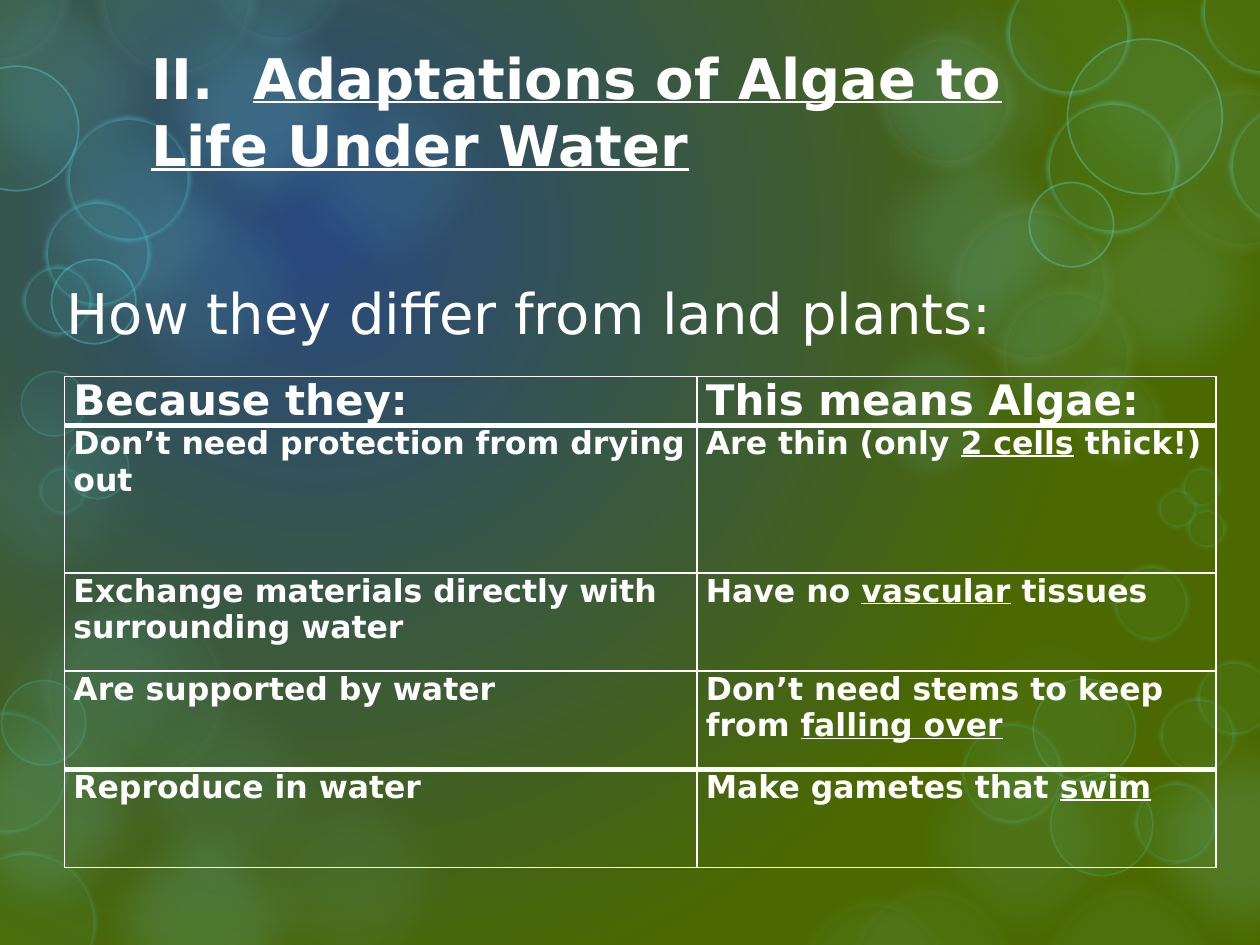
"""Build a slide on how algae are adapted to life under water."""
from lxml import etree
from pptx import Presentation
from pptx import util as u
from pptx.dml.color import RGBColor
from pptx.enum import shapes, text
from pptx.oxml import ns

WHITE = RGBColor(0xFF, 0xFF, 0xFF)
BLUE = RGBColor(0x28, 0x48, 0x80)
GREEN = RGBColor(0x4B, 0x69, 0x00)
GLOW = RGBColor(0x77, 0xD9, 0xE8)
CYAN = RGBColor(0x5E, 0xF0, 0xF7)
PALE = RGBColor(0xE9, 0xF9, 0xFB)

FONT = "DejaVu Sans"
GLOW_SIZE = 5.31

# Centre x, centre y, opacity
GLOWS = [
    (2.01, 13.87, 8), (4.1, 5.7, 10), (7.86, 3.44, 10), (4.09, 18.57, 16),
    (1.24, 1.83, 14), (5.22, 2.2, 20), (2.65, 4.48, 15), (23.47, 1.83, 10),
    (19.63, 1.9, 10), (23.47, 5.69, 15), (25.02, 16.94, 16), (21.17, 14.77, 5),
    (0.91, 16.41, 16), (4.61, 15.96, 8), (19.65, 4.84, 15), (20.59, 16.93, 10),
    (7.06, 17.81, 8), (0.89, 9.83, 8),
]
# Fill, fill opacity, line, line width, line opacity, soft edge, (centre x, centre y, diameter)
BUBBLES = [
    (GLOW, 10, None, 0, 0, 12, [(18.83, 8.34, 3.38)]),
    (GLOW, 10, PALE, 14, 6, 10, [
        (25.07, 3.4, 3.48), (19.08, 2.03, 2.9), (20.79, 5.73, 3.38), (21.49, 7.14, 2.9),
        (22.52, 8.39, 2.01), (3.56, 0, 3.33), (5.61, -0.46, 2.9), (0, -0.03, 2.9)]),
    (GLOW, 6, PALE, 14, 4, 10, [
        (2.71, 13.96, 3.89), (17.63, 19.61, 3.15), (18.75, 19.53, 3.45), (22.73, 19.48, 3.38)]),
    (CYAN, 5, CYAN, 1, 15, 0, [
        (0.88, 14.57, 1.7), (22.21, 16.62, 2.06), (21.86, 14.72, 2.06),
        (1.08, 8.14, 1.3), (1.96, 9.42, 1.27)]),
    (CYAN, 5, CYAN, 5, 15, 3, [
        (0.53, 18.59, 2.87), (0.13, 15.57, 2.49), (20.41, 15.58, 2.06), (23.7, 16.59, 1.68),
        (23.2, 12.15, 1.55), (24.14, 14.82, 1.55), (24.89, 14.07, 1.55), (24.22, 9.82, 0.84),
        (23.74, 10.25, 0.84), (24.32, 10.66, 0.84), (1.26, 9.89, 0.99)]),
    (CYAN, 5, CYAN, 1, 30, 0, [
        (0.33, 2.59, 2.51), (1.89, 6.08, 1.7), (23.08, 2.35, 3.12), (21.6, 4.53, 1.7)]),
    (CYAN, 5, CYAN, 5, 30, 3, [
        (2.59, 3.61, 2.54), (1.97, 5.12, 2.16), (1.16, 6.06, 1.45), (21.54, 0.66, 2.51),
        (25.48, 0.25, 2.54), (26.04, 3.35, 2.54), (22.43, 3.38, 2.69)]),
]
# Each cell is a list of (words, underlined)
ROWS = [
    ([("Because they:", False)], [("This means Algae:", False)]),
    ([("Don’t need protection from drying out", False)],
     [("Are thin (only ", False), ("2 cells", True), (" thick!)", False)]),
    ([("Exchange materials directly with surrounding water", False)],
     [("Have no ", False), ("vascular", True), (" tissues", False)]),
    ([("Are supported by water", False)],
     [("Don’t need stems to keep from ", False), ("falling over", True)]),
    ([("Reproduce in water", False)],
     [("Make gametes that ", False), ("swim", True)]),
]
COLUMN_WIDTHS = [12.75, 10.46]
ROW_HEIGHTS = [0.99, 2.97, 1.98, 1.98, 1.98]
THICK_ABOVE = (1, 4)


def add_child(parent, tag, **attributes):
    """Append a drawing element and return it."""
    child = etree.SubElement(parent, ns.qn(tag))
    for name, value in attributes.items():
        child.set(name, str(value))
    return child


def paint_background(slide):
    """Fill the slide with a radial gradient from blue to green."""
    fill = slide.background.fill
    fill.gradient()
    for stop, color in zip(fill.gradient_stops, (BLUE, GREEN)):
        stop.color.rgb = color
    gradient = next(slide.element.iter(ns.qn("a:gradFill")))
    gradient.remove(gradient.find(ns.qn("a:lin")))
    radial = add_child(gradient, "a:path", path="circle")
    add_child(radial, "a:fillToRect", l=50000, t=50000, r=100000, b=100000)


def add_bubble(slide, x, y, diameter, fill, opacity, line=None, width=0, line_opacity=0, soft=0):
    """Add a translucent circle to the backdrop of the slide layout."""
    radius = diameter / 2
    shape = slide.shapes.add_shape(
        shapes.MSO_SHAPE.OVAL, u.Cm(x - radius), u.Cm(y - radius), u.Cm(diameter), u.Cm(diameter))
    shape.shadow.inherit = False
    shape.fill.solid()
    shape.fill.fore_color.rgb = fill
    if line is None:
        shape.line.fill.background()
    else:
        shape.line.color.rgb = line
        shape.line.width = u.Pt(width)
    properties = shape.element.spPr
    for color, percent in zip(properties.iter(ns.qn("a:srgbClr")), (opacity, line_opacity)):
        add_child(color, "a:alpha", val=percent * 1000)
    if soft:
        add_child(properties.find(ns.qn("a:effectLst")), "a:softEdge", rad=u.Pt(soft))
    backdrop = slide.slide_layout.shapes.element
    next(shape.element.iter(ns.qn("p:cNvPr"))).set("id", str(100 + len(backdrop)))
    backdrop.append(shape.element)


def add_run(paragraph, words, size, bold=False, underline=False):
    """Add one white run to a paragraph."""
    run = paragraph.add_run()
    run.text = words
    run.font.name = FONT
    run.font.size = u.Pt(size)
    run.font.bold = bold
    run.font.underline = underline
    run.font.color.rgb = WHITE


def place(shape, left, top, width, height, anchor):
    """Move a placeholder and return its left-aligned paragraph."""
    shape.left, shape.top, shape.width, shape.height = map(u.Cm, (left, top, width, height))
    frame = shape.text_frame
    frame.word_wrap = True
    frame.auto_size = text.MSO_AUTO_SIZE.NONE
    frame.vertical_anchor = anchor
    paragraph = frame.paragraphs[0]
    paragraph.alignment = text.PP_ALIGN.LEFT
    paragraph.space_before = u.Pt(0)
    return paragraph


def add_headings(slide):
    """Write the title and the line that leads into the table."""
    title, body = slide.placeholders
    paragraph = place(title, 2.79, 1.88, 19.79, 2.57, text.MSO_ANCHOR.MIDDLE)
    add_run(paragraph, "II.  ", 32, bold=True)
    add_run(paragraph, "Adaptations of Algae to Life Under Water", 32, bold=True, underline=True)
    paragraph.add_line_break()
    paragraph = place(body, 1.09, 5.03, 21.49, 11.25, text.MSO_ANCHOR.TOP)
    body.text_frame.margin_top = u.Cm(0.58)
    properties = paragraph._p.get_or_add_pPr()
    properties.set("marL", "0")
    properties.set("indent", "0")
    add_child(properties, "a:buNone")
    add_run(paragraph, "How they differ from land plants:", 32)


def set_borders(cell, row):
    """Draw white cell borders, thick under the header and above the last row."""
    widths = {"L": 1, "R": 1, "T": 3 if row in THICK_ABOVE else 1,
              "B": 3 if row + 1 in THICK_ABOVE else 1}
    properties = cell._tc.get_or_add_tcPr()
    for position, (side, width) in enumerate(widths.items()):
        line = add_child(properties, f"a:ln{side}", w=u.Pt(width))
        add_child(add_child(line, "a:solidFill"), "a:srgbClr", val=WHITE)
        properties.insert(position, line)


def add_comparison(slide):
    """Add the table of causes and adaptations."""
    frame = slide.shapes.add_table(
        len(ROWS), len(COLUMN_WIDTHS), u.Cm(1.3), u.Cm(7.59),
        u.Cm(sum(COLUMN_WIDTHS)), u.Cm(sum(ROW_HEIGHTS)))
    table = frame.table
    table.first_row = table.horz_banding = False
    for column, width in zip(table.columns, COLUMN_WIDTHS):
        column.width = u.Cm(width)
    for row, (height, contents) in enumerate(zip(ROW_HEIGHTS, ROWS)):
        table.rows[row].height = u.Cm(height)
        for cell, runs in zip(table.rows[row].cells, contents):
            cell.fill.background()
            cell.margin_left = cell.margin_right = u.Cm(0.18)
            cell.margin_top = cell.margin_bottom = 0
            set_borders(cell, row)
            for words, underline in runs:
                add_run(cell.text_frame.paragraphs[0], words, 18 if row else 24, True, underline)


def main():
    """Assemble and save the slide."""
    presentation = Presentation()
    presentation.slide_width, presentation.slide_height = u.Cm(25.4), u.Cm(19.05)
    slide = presentation.slides.add_slide(presentation.slide_layouts[1])
    paint_background(slide)
    for x, y, opacity in GLOWS:
        add_bubble(slide, x, y, GLOW_SIZE, GLOW, opacity, soft=25)
    for *style, circles in BUBBLES:
        for circle in circles:
            add_bubble(slide, *circle, *style)
    add_headings(slide)
    add_comparison(slide)
    presentation.save("out.pptx")


if __name__ == "__main__":
    main()
